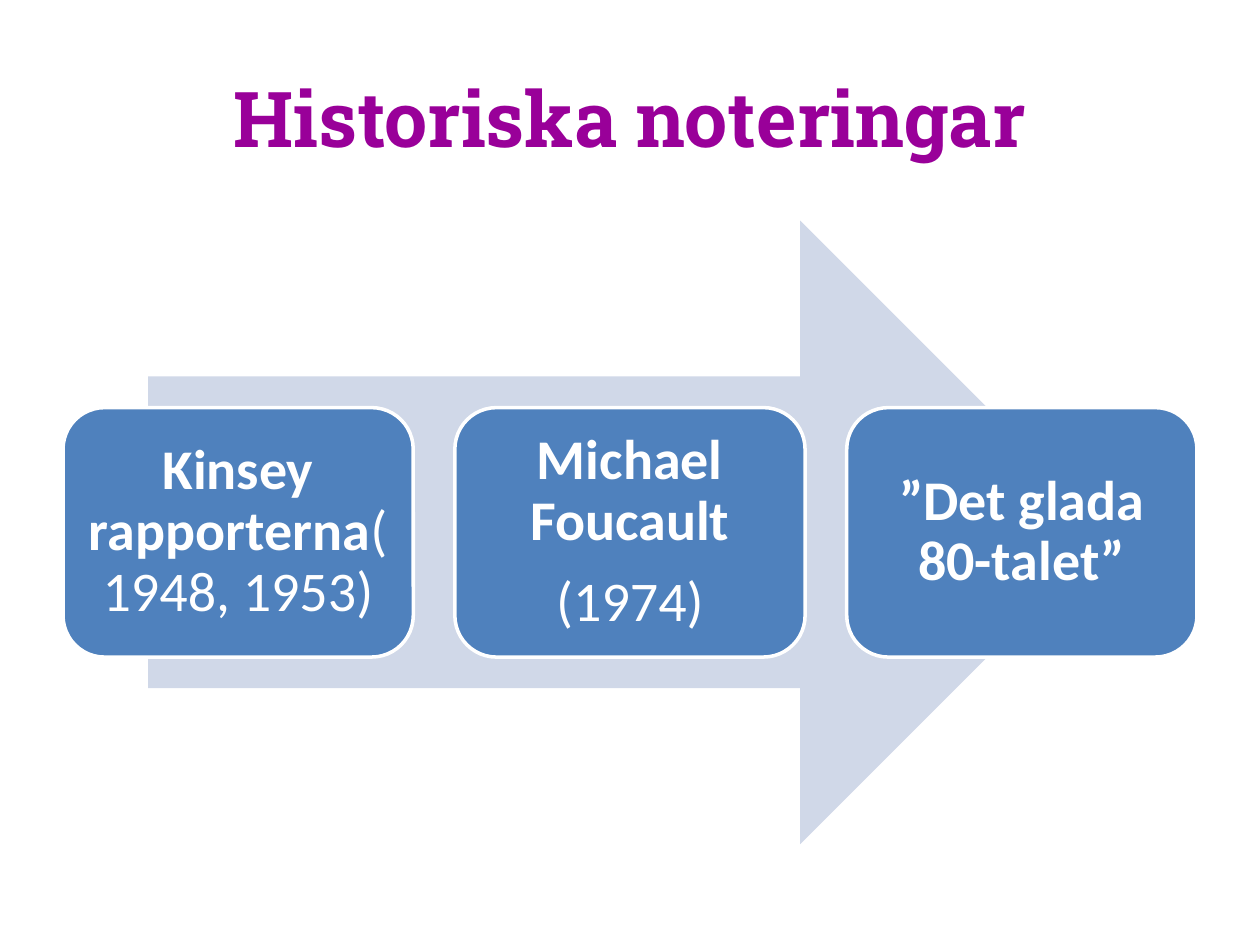
from pptx import Presentation
from pptx.dml.color import RGBColor
from pptx.enum import shapes, text
from pptx.util import Inches, Pt

PURPLE = RGBColor(0x99, 0x00, 0x99)
PALE_BLUE = RGBColor(0xD0, 0xD8, 0xE8)
BLUE = RGBColor(0x4F, 0x81, 0xBD)
WHITE = RGBColor(0xFF, 0xFF, 0xFF)

TITLE_FONT = {"name": "Roboto Slab", "size": Pt(44), "bold": True}
STEP_FONT = {"name": "Calibri", "size": Pt(32)}
STEP_PARAGRAPH = {"alignment": text.PP_ALIGN.CENTER, "line_spacing": 0.9,
                  "space_after": Pt(12)}
STEP_FRAME = {"word_wrap": True, "vertical_anchor": text.MSO_ANCHOR.MIDDLE,
              **{f"margin_{side}": Inches(0.03)
                 for side in ("left", "top", "right", "bottom")}}

STEPS = [
    [[("Kinsey rapporterna", True), ("(1948, 1953)", False)]],
    [[("Michael Foucault", True)], [("(1974)", False)]],
    [[("”Det glada 80-talet”", True)]],
]


def apply_format(target, values):
    for name, value in values.items():
        setattr(target, name, value)


def add_filled_shape(page, kind, box, color):
    shape = page.shapes.add_shape(kind, *map(Inches, box))
    shape.shadow.inherit = False
    shape.fill.solid()
    shape.fill.fore_color.rgb = color
    return shape


def place_title(page, box, wording):
    title = page.shapes.title
    apply_format(title, dict(zip(("left", "top", "width", "height"),
                                 map(Inches, box))))
    title.text_frame.vertical_anchor = text.MSO_ANCHOR.MIDDLE
    para = title.text_frame.paragraphs[0]
    para.alignment = text.PP_ALIGN.CENTER
    span = para.add_run()
    span.text = wording
    apply_format(span.font, TITLE_FONT)
    span.font.color.rgb = PURPLE


def place_step(page, box, paragraphs):
    step = add_filled_shape(page, shapes.MSO_SHAPE.ROUNDED_RECTANGLE, box, BLUE)
    step.line.color.rgb = WHITE
    step.line.width = Pt(2)
    frame = step.text_frame
    apply_format(frame, STEP_FRAME)
    for index, spans in enumerate(paragraphs):
        para = frame.add_paragraph() if index else frame.paragraphs[0]
        apply_format(para, STEP_PARAGRAPH)
        for wording, bold in spans:
            span = para.add_run()
            span.text = wording
            apply_format(span.font, {**STEP_FONT, "bold": bold})
            span.font.color.rgb = WHITE


def place_process(page, box, steps):
    left, top, width, height = box
    arrow_width = width * 0.85
    arrow_box = (left + (width - arrow_width) / 2, top, arrow_width, height)
    arrow = add_filled_shape(page, shapes.MSO_SHAPE.RIGHT_ARROW, arrow_box, PALE_BLUE)
    arrow.line.fill.background()

    step_width, step_height = 2.78, height * 0.4
    pitch = (width - step_width) / (len(steps) - 1)
    step_top = top + (height - step_height) / 2
    for index, paragraphs in enumerate(steps):
        step_box = (left + index * pitch, step_top, step_width, step_height)
        place_step(page, step_box, paragraphs)


def main():
    deck = Presentation()
    deck.slide_width, deck.slide_height = Inches(10), Inches(7.5)
    page = deck.slides.add_slide(deck.slide_layouts[5])
    place_title(page, (0.5, 0.3, 9, 1.25), "Historiska noteringar")
    place_process(page, (0.5, 1.75, 9, 4.95), STEPS)
    deck.save("out.pptx")


if __name__ == "__main__":
    main()
